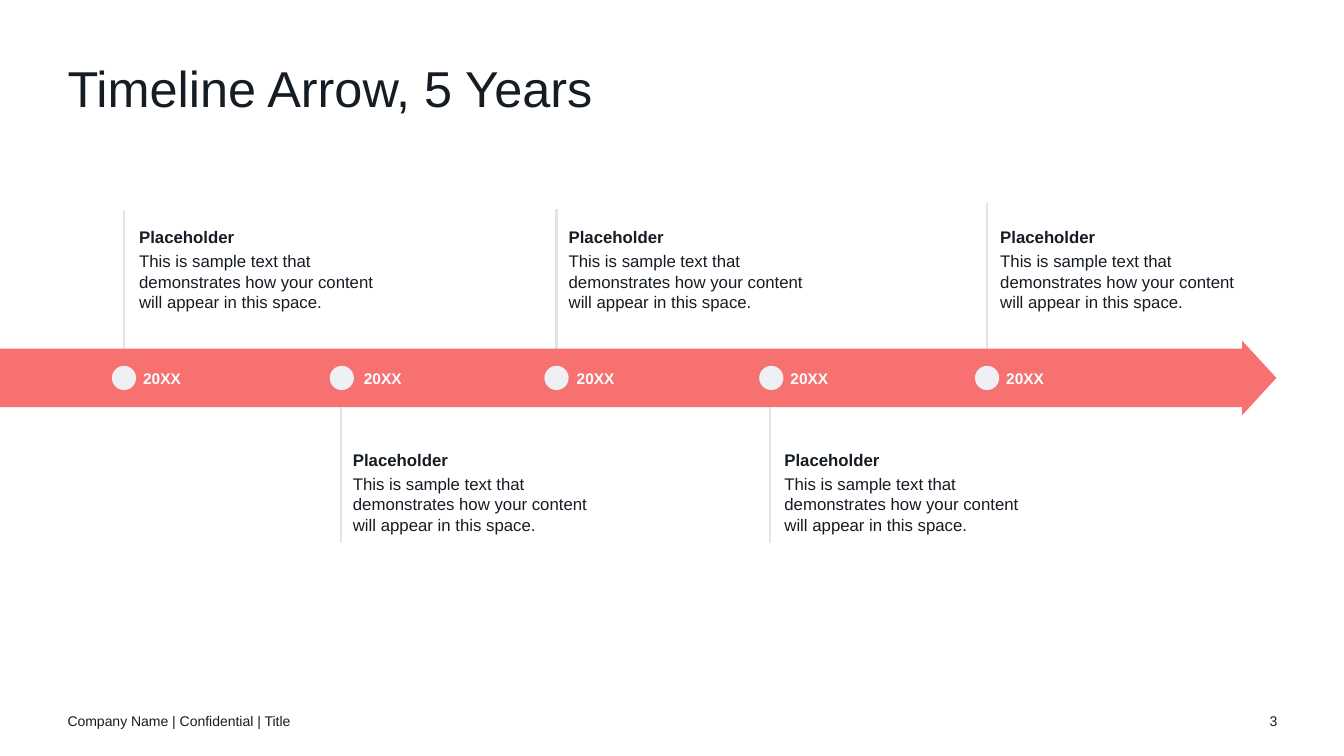
from dataclasses import dataclass

from lxml.etree import SubElement
from pptx import Presentation
from pptx.dml.color import RGBColor as Color
from pptx.enum.shapes import MSO_CONNECTOR as Connector, MSO_SHAPE as Preset
from pptx.enum.text import MSO_ANCHOR as Anchor, PP_ALIGN as Align
from pptx.oxml.ns import qn
from pptx.shapes.autoshape import Shape
from pptx.slide import Slide
from pptx.text.text import TextFrame, _Paragraph as Paragraph
from pptx.util import Inches, Pt


@dataclass(frozen=True)
class Theme:
    font: str = "Arial"
    ink: str = "151C23"
    year: str = "FFFFFF"
    arrow: str = "F87171"
    dot: str = "EEF0F4"
    stem: str = "E1E4E9"
    title_size: int = 36
    body_size: int = 12
    year_size: int = 11
    footer_size: int = 10


@dataclass(frozen=True)
class Milestone:
    stem_left: float
    stem_end: float
    dot_left: float
    year_left: float
    text_left: float
    above: bool


THEME = Theme()
HEADING = "Placeholder"
BODY = "This is sample text that demonstrates how your content will appear in this space."
YEAR = "20XX"
DOT_SIZE = 0.24
ARROW_MIDDLE = 3.75
BAND_HALF = 0.29
HEAD_HALF = 0.37
HEAD_LEFT = 12.32
ARROW_TIP = 12.66
MILESTONES = (
    Milestone(1.23, 2.08, 1.11, 1.42, 1.38, True),
    Milestone(3.38, 5.39, 3.27, 3.61, 3.5, False),
    Milestone(5.52, 2.07, 5.4, 5.72, 5.64, True),
    Milestone(7.64, 5.39, 7.53, 7.84, 7.78, False),
    Milestone(9.79, 2.01, 9.67, 9.98, 9.92, True),
)


def format_paragraph(paragraph: Paragraph, size: int, color: str = THEME.ink, bold: bool = False) -> None:
    for run in paragraph.runs:
        run.font.name = THEME.font
        run.font.size = Pt(size)
        run.font.bold = bold
        run.font.color.rgb = Color.from_string(color)


def clear_margins(frame: TextFrame) -> None:
    frame.margin_left = frame.margin_top = frame.margin_right = frame.margin_bottom = 0
    frame.word_wrap = True


def add_text(slide: Slide, left: float, top: float, width: float, height: float, text: str) -> TextFrame:
    box = slide.shapes.add_textbox(Inches(left), Inches(top), Inches(width), Inches(height))
    clear_margins(box.text_frame)
    box.text_frame.text = text
    return box.text_frame


def paint(shape: Shape, color: str) -> None:
    shape.shadow.inherit = False
    shape.fill.solid()
    shape.fill.fore_color.rgb = Color.from_string(color)
    shape.line.fill.background()


def add_title(slide: Slide, text: str) -> None:
    title = slide.shapes.title
    title.left, title.top, title.width, title.height = map(Inches, (0.67, 0.6, 12, 0.6))
    frame = title.text_frame
    clear_margins(frame)
    frame.vertical_anchor = Anchor.MIDDLE
    frame.text = text
    paragraph = frame.paragraphs[0]
    paragraph.alignment = Align.LEFT
    paragraph.line_spacing = 0.9
    format_paragraph(paragraph, THEME.title_size)


def add_stem(slide: Slide, milestone: Milestone) -> None:
    left = Inches(milestone.stem_left)
    start = Inches(3.61 if milestone.above else 3.92)
    stem = slide.shapes.add_connector(Connector.STRAIGHT, left, start, left, Inches(milestone.stem_end))
    stem.line.color.rgb = Color.from_string(THEME.stem)
    stem.line.width = Pt(1.5)
    SubElement(stem._element.spPr, qn("a:effectLst"))


def add_arrow(slide: Slide) -> None:
    upper = [(0, -BAND_HALF), (HEAD_LEFT, -BAND_HALF), (HEAD_LEFT, -HEAD_HALF)]
    lower = [(left, -offset) for left, offset in reversed(upper)]
    outline = [
        (Inches(left), Inches(ARROW_MIDDLE + offset))
        for left, offset in [*upper, (ARROW_TIP, 0), *lower]
    ]
    builder = slide.shapes.build_freeform(*outline[0])
    builder.add_line_segments(outline[1:], close=True)
    paint(builder.convert_to_shape(), THEME.arrow)


def add_milestone(slide: Slide, milestone: Milestone) -> None:
    dot = slide.shapes.add_shape(
        Preset.OVAL,
        Inches(milestone.dot_left),
        Inches(ARROW_MIDDLE - DOT_SIZE / 2),
        Inches(DOT_SIZE),
        Inches(DOT_SIZE),
    )
    paint(dot, THEME.dot)

    text_top = 2.25 if milestone.above else 4.46
    frame = add_text(slide, milestone.text_left, text_top, 2.45, 0.85, f"{HEADING}\n{BODY}")
    for paragraph, bold in zip(frame.paragraphs, (True, False)):
        paragraph.space_after = Pt(3)
        format_paragraph(paragraph, THEME.body_size, bold=bold)

    year = add_text(slide, milestone.year_left, 3.66, 1, 0.19, YEAR)
    format_paragraph(year.paragraphs[0], THEME.year_size, THEME.year, bold=True)


def add_footer(slide: Slide, left: float, width: float, text: str, alignment: Align) -> None:
    frame = add_text(slide, left, 6.95, width, 0.4, text)
    frame.vertical_anchor = Anchor.MIDDLE
    frame.paragraphs[0].alignment = alignment
    format_paragraph(frame.paragraphs[0], THEME.footer_size)


def main() -> None:
    presentation = Presentation()
    presentation.slide_width = Inches(13.33)
    presentation.slide_height = Inches(7.5)
    slide = presentation.slides.add_slide(presentation.slide_layouts.get_by_name("Title Only"))

    add_title(slide, "Timeline Arrow, 5 Years")
    add_footer(slide, 12.17, 0.5, "3", Align.RIGHT)
    add_footer(slide, 0.67, 4.5, "Company Name | Confidential | Title", Align.LEFT)
    for milestone in MILESTONES:
        add_stem(slide, milestone)
    add_arrow(slide)
    for milestone in MILESTONES:
        add_milestone(slide, milestone)

    presentation.save("out.pptx")


if __name__ == "__main__":
    main()
